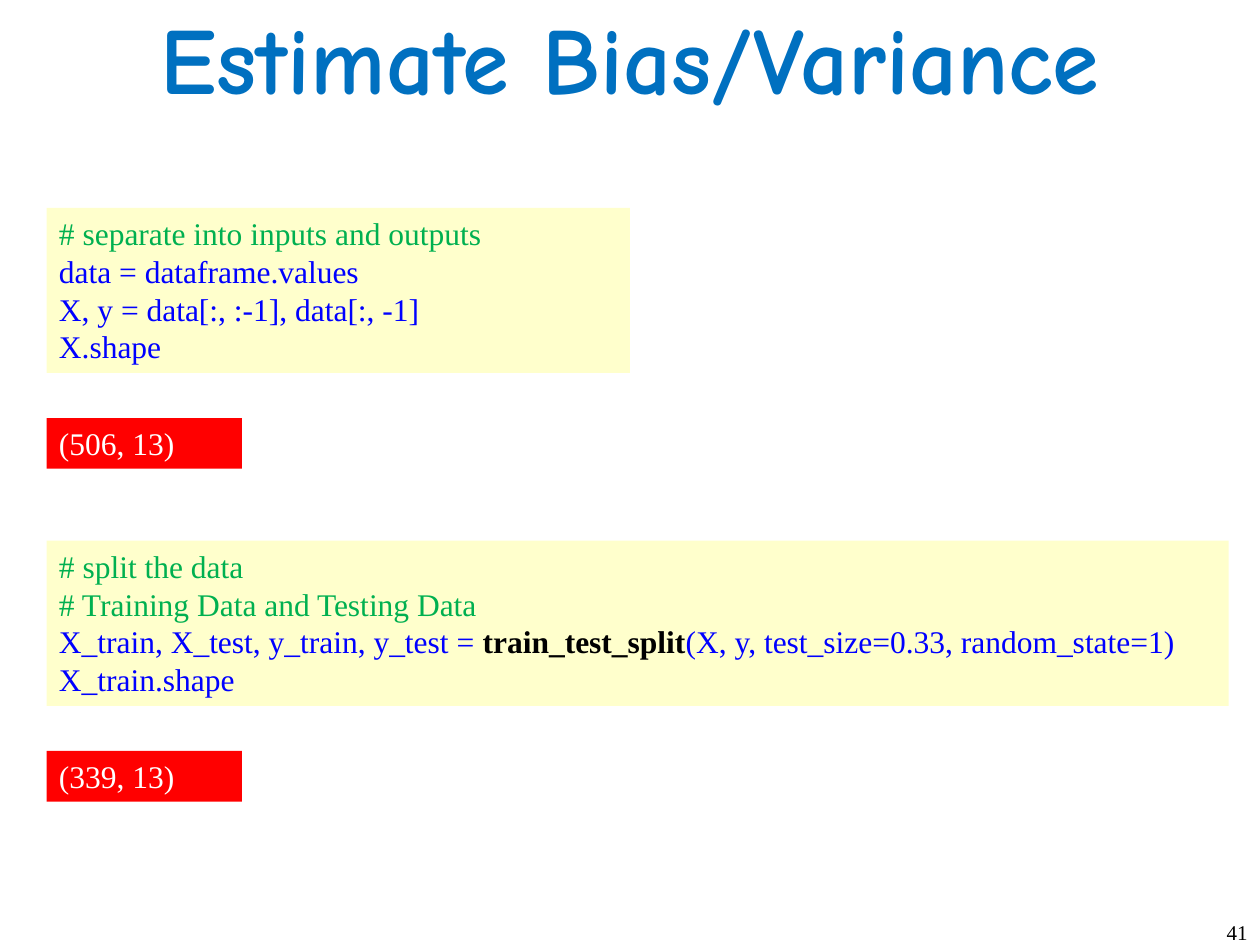
import pptx
import pptx.util
import pptx.dml.color
import pptx.enum.shapes
import pptx.enum.text
from dataclasses import dataclass

Cm = pptx.util.Cm
Align = pptx.enum.text.PP_ALIGN
Anchor = pptx.enum.text.MSO_ANCHOR
Fit = pptx.enum.text.MSO_AUTO_SIZE


@dataclass(frozen=True)
class Theme:
    head: str = "Comic Neue"
    body: str = "Times New Roman"
    title: str = "0070C0"
    note: str = "00B050"
    code: str = "0000FF"
    black: str = "000000"
    white: str = "FFFFFF"
    cream: str = "FFFFCC"
    red: str = "FF0000"
    big: int = 54
    mid: int = 18
    small: int = 12


T = Theme()
CODE = {"name": T.body, "size": T.mid, "bold": False, "color": T.code}
NOTE = CODE | {"color": T.note}
CALL = CODE | {"color": T.black, "bold": True}
RESULT = CODE | {"color": T.white}
TITLE = {"name": T.head, "size": T.big, "bold": True, "color": T.title}
PAGE = CODE | {"size": T.small, "color": T.black}


def rgb(code):
    return pptx.dml.color.RGBColor.from_string(code)


def style(font, look):
    for key, value in look.items():
        if key == "color":
            font.color.rgb = rgb(value)
        else:
            setattr(font, key, pptx.util.Pt(value) if key == "size" else value)


def write(shape, lines, align=Align.LEFT, **frame):
    """Fill a shape with lines, each a list of (text, look) pairs."""
    body = shape.text_frame
    for key, value in ({"word_wrap": True} | frame).items():
        setattr(body, key, value)
    for i, line in enumerate(lines):
        para = body.add_paragraph() if i else body.paragraphs[0]
        para.alignment = align
        for text, look in line:
            run = para.add_run()
            run.text = text
            style(run.font, look)


def panel(slide, box, fill, lines):
    rect = pptx.enum.shapes.MSO_SHAPE.RECTANGLE
    shape = slide.shapes.add_shape(rect, *map(Cm, box))
    shape.shadow.inherit = False
    shape.fill.solid()
    shape.fill.fore_color.rgb = rgb(fill)
    shape.line.fill.background()
    write(shape, lines, vertical_anchor=Anchor.TOP,
          auto_size=Fit.SHAPE_TO_FIT_TEXT)


def cell(slide, box, lines, result):
    """Code panel filling the box, with its output panel just below."""
    left, top, _, high = box
    gap = 0.91
    panel(slide, box, T.cream, lines)
    panel(slide, (left, top + high + gap, 3.94, 1.02), T.red,
          [[(result, RESULT)]])


def label(slide, box, text, look, align, anchor):
    shape = slide.shapes.add_textbox(*map(Cm, box))
    write(shape, [[(text, look)]], align, vertical_anchor=anchor)


def main():
    deck = pptx.Presentation()
    wide, high = 25.4, 19.05
    deck.slide_width, deck.slide_height = Cm(wide), Cm(high)
    slide = deck.slides.add_slide(deck.slide_layouts[6])

    label(slide, (0, 0, wide, 2.29), "Estimate Bias/Variance", TITLE,
          Align.CENTER, Anchor.MIDDLE)
    left, tall = 0.94, 3.33
    cell(slide, (left, 4.19, 11.76, tall), [
        [("# separate into inputs and outputs", NOTE)],
        [("data = dataframe.values", CODE)],
        [("X, y = data[:, :-1], data[:, -1]", CODE)],
        [("X.shape", CODE)],
    ], "(506, 13)")
    cell(slide, (left, 10.9, 23.83, tall), [
        [("# split the data", NOTE)],
        [("# Training Data and Testing Data", NOTE)],
        [("X_train, X_test, y_train, y_test = ", CODE),
         ("train_test_split", CALL),
         ("(X, y, test_size=0.33, random_state=1)", CODE)],
        [("X_train.shape", CODE)],
    ], "(339, 13)")
    label(slide, (wide - 1.9, high - 0.64, 1.9, 0.64), "41", PAGE,
          Align.RIGHT, Anchor.TOP)
    deck.save("out.pptx")


if __name__ == "__main__":
    main()
